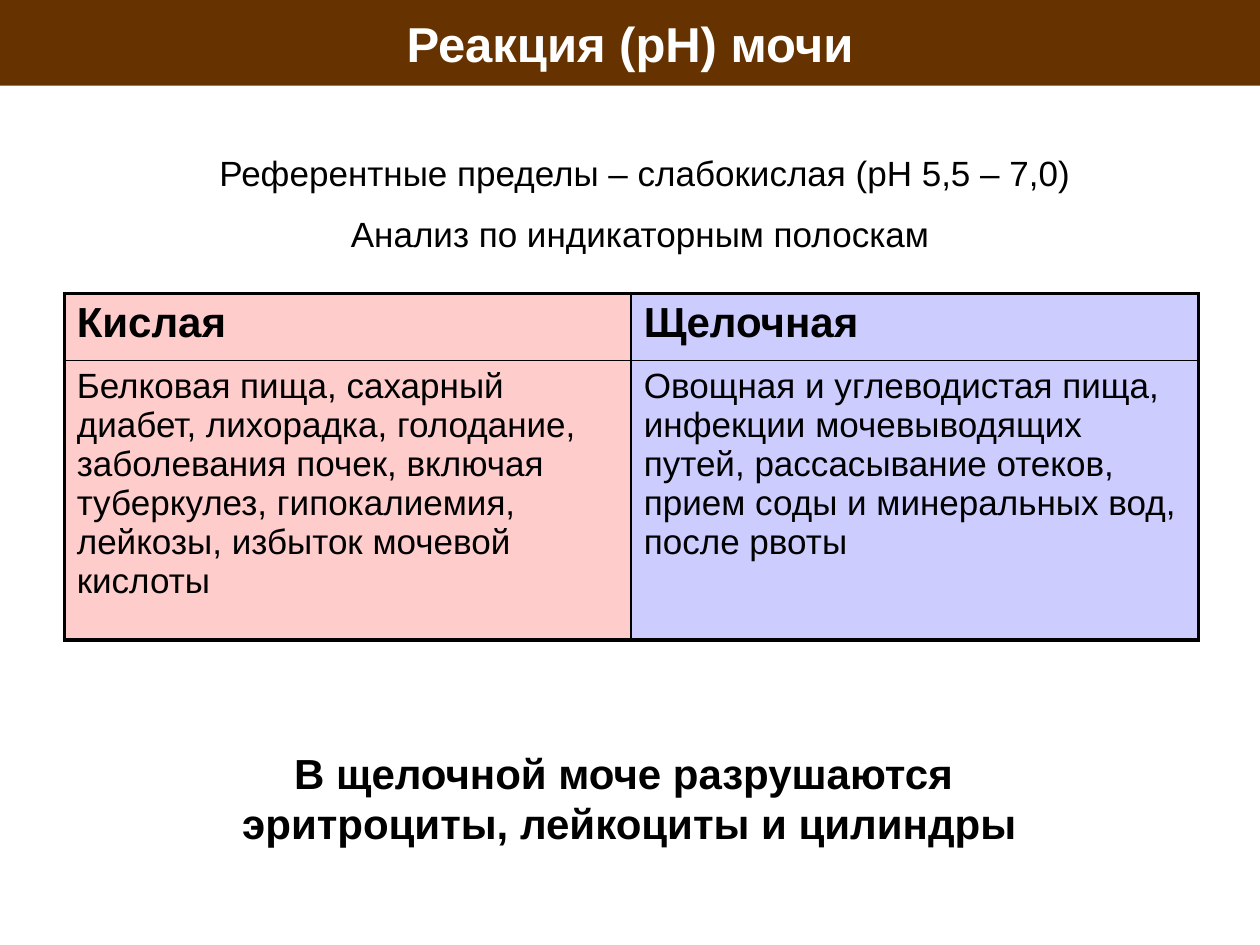
import pptx
import pptx.dml.color
import pptx.enum.text
import pptx.oxml
import pptx.oxml.ns
import pptx.util
from pptx.util import Inches

CENTER = pptx.enum.text.PP_ALIGN.CENTER
LEFT = pptx.enum.text.PP_ALIGN.LEFT
OUTER_BORDER, INNER_BORDER = 2.25, 1

REACTIONS = [
    ("Кислая", "FFCCCC",
     "Белковая пища, сахарный диабет, лихорадка, голодание, заболевания почек, "
     "включая туберкулез, гипокалиемия, лейкозы, избыток мочевой кислоты"),
    ("Щелочная", "CCCCFF",
     "Овощная и углеводистая пища, инфекции мочевыводящих путей, рассасывание "
     "отеков, прием соды и минеральных вод, после рвоты"),
]


def color(hex_code):
    return pptx.dml.color.RGBColor.from_string(hex_code)


def paint(part, hex_code):
    part.fill.solid()
    part.fill.fore_color.rgb = color(hex_code)


def write(frame, *lines, size=20, bold=False, ink="000000", align=LEFT, before=0):
    """Fill a text frame with one paragraph per line."""
    frame.word_wrap = True
    for index, line in enumerate(lines):
        paragraph = frame.add_paragraph() if index else frame.paragraphs[0]
        paragraph.alignment = align
        paragraph.space_before = pptx.util.Pt(before)
        run = paragraph.add_run()
        run.text = line
        run.font.name = "Arial"
        run.font.size = pptx.util.Pt(size)
        run.font.bold = bold
        run.font.color.rgb = color(ink)


def add_title(slide, title):
    banner = slide.shapes.title
    banner.left, banner.top = Inches(0), Inches(0)
    banner.width, banner.height = Inches(10), Inches(0.68)
    paint(banner, "663300")
    banner.text_frame.vertical_anchor = pptx.enum.text.MSO_ANCHOR.MIDDLE
    write(banner.text_frame, title, size=28, bold=True, ink="FFFFFF", align=CENTER)


def add_note(slide, left, top, width, height, *lines, **text_format):
    note = slide.shapes.add_textbox(Inches(left), Inches(top), Inches(width), Inches(height))
    write(note.text_frame, *lines, align=CENTER, **text_format)


def set_borders(cell, widths):
    """Draw black borders; widths are points for left, right, top and bottom."""
    properties = cell._tc.get_or_add_tcPr()
    for index, (side, width) in enumerate(zip("LRTB", widths)):
        border = pptx.oxml.parse_xml(
            f'<a:ln{side} {pptx.oxml.ns.nsdecls("a")} w="{pptx.util.Pt(width)}">'
            '<a:solidFill><a:srgbClr val="000000"/></a:solidFill>'
            f'</a:ln{side}>')
        properties.insert(index, border)


def add_reaction_table(slide):
    table = slide.shapes.add_table(
        2, len(REACTIONS), Inches(0.51), Inches(2.33), Inches(9), Inches(2.75)).table
    table.rows[0].height, table.rows[1].height = Inches(0.53), Inches(2.22)
    last = len(REACTIONS) - 1
    for column, (reaction, fill, causes) in enumerate(REACTIONS):
        for row, (text, size) in enumerate([(reaction, 24), (causes, 20)]):
            cell = table.cell(row, column)
            paint(cell, fill)
            write(cell.text_frame, text, size=size, bold=row == 0, before=size * 0.2)
            on_edge = (column == 0, column == last, row == 0, row == 1)
            set_borders(cell, [OUTER_BORDER if edge else INNER_BORDER for edge in on_edge])


def main():
    deck = pptx.Presentation()
    deck.slide_width, deck.slide_height = Inches(10), Inches(7.5)
    slide = deck.slides.add_slide(deck.slide_layouts[5])
    add_title(slide, "Реакция (рН) мочи")
    add_note(slide, 1.3, 1.15, 7.64, 0.94,
             "Референтные пределы – слабокислая (рН 5,5 – 7,0)",
             "Анализ по индикаторным полоскам ", before=11)
    add_reaction_table(slide)
    add_note(slide, 0.35, 5.88, 9.29, 0.91,
             "В щелочной моче разрушаются ",
             "эритроциты, лейкоциты и цилиндры", size=24, bold=True)
    deck.save("out.pptx")


if __name__ == "__main__":
    main()
